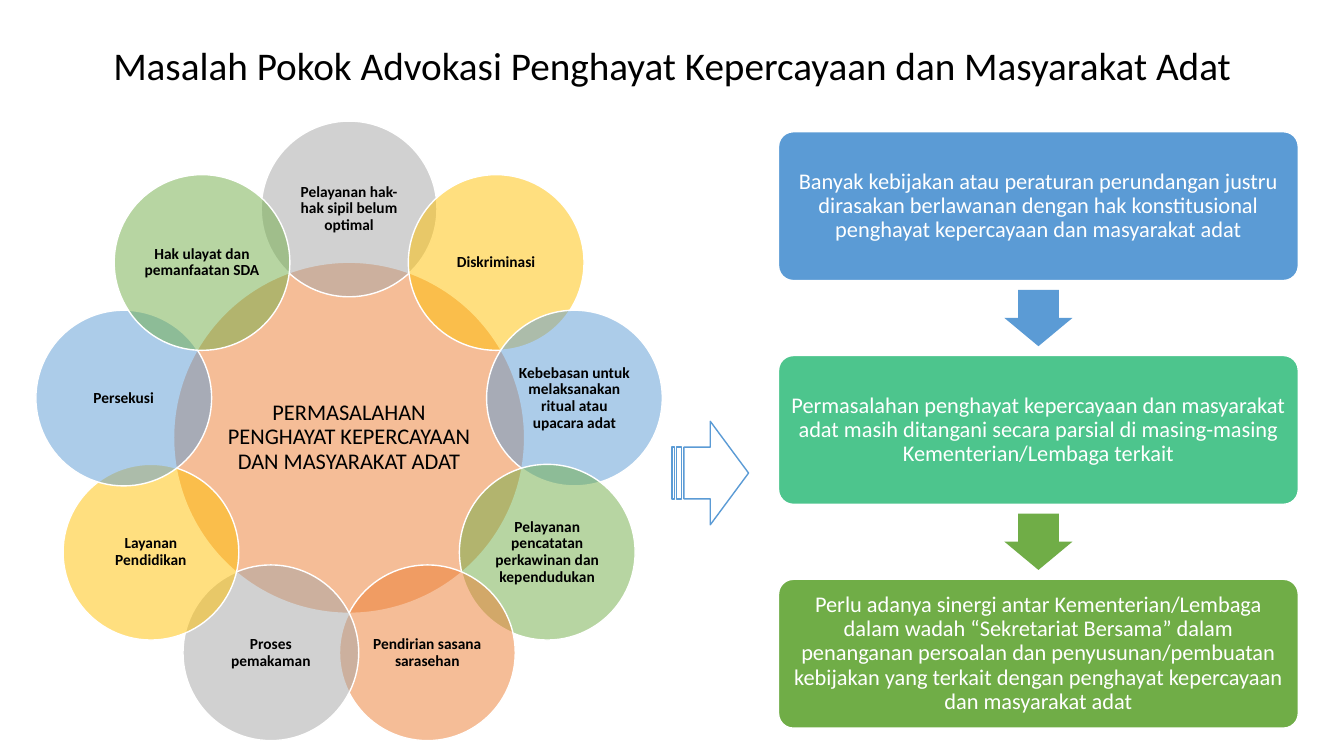
from math import cos, radians, sin

from lxml import etree
from pptx import Presentation
from pptx.dml.color import RGBColor
from pptx.enum.shapes import MSO_SHAPE
from pptx.enum.text import MSO_ANCHOR, PP_ALIGN
from pptx.oxml.ns import qn
from pptx.util import Inches, Pt

CIRCLE = MSO_SHAPE.OVAL
ROUNDED = MSO_SHAPE.ROUNDED_RECTANGLE
ARROW = MSO_SHAPE.RIGHT_ARROW
STRIPED_ARROW = MSO_SHAPE.STRIPED_RIGHT_ARROW
MIDDLE = MSO_ANCHOR.MIDDLE
CENTER = PP_ALIGN.CENTER

BLACK = RGBColor(0x00, 0x00, 0x00)
WHITE = RGBColor(0xFF, 0xFF, 0xFF)
ORANGE = RGBColor(0xED, 0x7D, 0x31)
GRAY = RGBColor(0xA5, 0xA5, 0xA5)
GOLD = RGBColor(0xFF, 0xC0, 0x00)
BLUE = RGBColor(0x5B, 0x9B, 0xD5)
GREEN = RGBColor(0x70, 0xAD, 0x47)
TEAL = RGBColor(0x4D, 0xC5, 0x8D)

# Square grid cells: 40 columns by 22.5 rows
COLUMNS, ROWS = 40, 22.5
SLIDE_WIDTH, SLIDE_HEIGHT = Inches(13.33), Inches(7.5)

TITLE = "Masalah Pokok Advokasi Penghayat Kepercayaan dan Masyarakat Adat"
HUB = "PERMASALAHAN PENGHAYAT KEPERCAYAAN DAN MASYARAKAT ADAT"
PETALS = [
    ("Pelayanan hak-hak sipil belum optimal", GRAY),
    ("Diskriminasi", GOLD),
    ("Kebebasan untuk melaksanakan ritual atau upacara adat", BLUE),
    ("Pelayanan pencatatan perkawinan dan kependudukan", GREEN),
    ("Pendirian sasana sarasehan", ORANGE),
    ("Proses pemakaman", GRAY),
    ("Layanan Pendidikan", GOLD),
    ("Persekusi", BLUE),
    ("Hak ulayat dan pemanfaatan SDA", GREEN),
]
STEPS = [
    ("Banyak kebijakan atau peraturan perundangan justru dirasakan berlawanan "
     "dengan hak konstitusional penghayat kepercayaan dan masyarakat adat", BLUE),
    ("Permasalahan penghayat kepercayaan dan masyarakat adat masih ditangani "
     "secara parsial di masing-masing Kementerian/Lembaga terkait", TEAL),
    ("Perlu adanya sinergi antar Kementerian/Lembaga dalam wadah “Sekretariat "
     "Bersama” dalam penanganan persoalan dan penyusunan/pembuatan kebijakan "
     "yang terkait dengan penghayat kepercayaan dan masyarakat adat", GREEN),
]


class Page:
    font_name = "Calibri"

    def __init__(self, deck):
        self.slide = deck.slides.add_slide(deck.slide_layouts[5])
        self.column = deck.slide_width / COLUMNS
        self.row = deck.slide_height / ROWS

    def place(self, left, top, width, height):
        return (int(left * self.column), int(top * self.row),
                int(width * self.column), int(height * self.row))

    def set_text(self, shape, text, size, color, bold=False, inset=None):
        frame = shape.text_frame
        frame.word_wrap = True
        frame.vertical_anchor = MIDDLE
        if inset is not None:
            frame.margin_left = frame.margin_right = Inches(inset)
            frame.margin_top = frame.margin_bottom = Inches(inset)
        para = frame.paragraphs[0]
        para.text = text
        para.alignment = CENTER
        para.line_spacing = 0.9
        para.font.name = self.font_name
        para.font.size = Pt(size)
        para.font.bold = bold
        para.font.color.rgb = color

    def title(self, text, *area):
        box = self.slide.shapes.title
        box.left, box.top, box.width, box.height = self.place(*area)
        self.set_text(box, text, 28, BLACK)

    def shape(self, kind, area, fill, line=None):
        shape = self.slide.shapes.add_shape(kind, *self.place(*area))
        shape.shadow.inherit = False
        shape.fill.solid()
        shape.fill.fore_color.rgb = fill
        if line is None:
            shape.line.fill.background()
        else:
            shape.line.color.rgb = line
            shape.line.width = Pt(1)
        return shape

    def circle(self, center_x, center_y, size, fill, text, text_size, bold):
        area = (center_x - size / 2, center_y - size / 2, size, size)
        circle = self.shape(CIRCLE, area, fill, WHITE)
        # The first colour in the shape is its fill; make it half transparent
        color = next(circle.element.iter(qn("a:srgbClr")))
        etree.SubElement(color, qn("a:alpha"), val="50000")
        self.set_text(circle, text, text_size, BLACK, bold, inset=0.02)

    def step(self, area, fill, text):
        box = self.shape(ROUNDED, area, fill, WHITE)
        box.adjustments[0] = 0.1
        self.set_text(box, text, 16, WHITE, inset=0.07)

    def down_arrow(self, center_x, center_y, length, breadth, fill):
        area = (center_x - length / 2, center_y - breadth / 2, length, breadth)
        arrow = self.shape(ARROW, area, fill)
        arrow.rotation = 90
        arrow.adjustments[0] = 0.6
        arrow.adjustments[1] = 0.5


def main():
    deck = Presentation()
    deck.slide_width, deck.slide_height = SLIDE_WIDTH, SLIDE_HEIGHT
    page = Page(deck)
    page.title(TITLE, 2.75, 1.2, 34.5, 1.62)

    # Hub with a ring of overlapping circles, clockwise from the top
    hub_x, hub_y, ring_radius = 10.39, 13.03, 6.81
    page.circle(hub_x, hub_y, 10.45, ORANGE, HUB, 16, False)
    for index, (text, fill) in enumerate(PETALS):
        angle = radians(index * 360 / len(PETALS))
        page.circle(hub_x + ring_radius * sin(angle),
                    hub_y - ring_radius * cos(angle),
                    5.23, fill, text, 11, True)

    # Arrow from the problems to the steps
    page.shape(STRIPED_ARROW, (20, 12.54, 2.28, 3.08), WHITE, BLUE)

    # Steps, with an arrow in the middle of each gap
    left, top, width, height, pitch = 23.17, 3.92, 15.47, 4.43, 6.66
    arrow_fills = [BLUE, GREEN]
    for index, (text, fill) in enumerate(STEPS):
        step_top = top + index * pitch
        page.step((left, step_top, width, height), fill, text)
        if index < len(arrow_fills):
            page.down_arrow(left + width / 2, step_top + (height + pitch) / 2,
                            1.68, 2.02, arrow_fills[index])

    deck.save("out.pptx")


if __name__ == "__main__":
    main()
